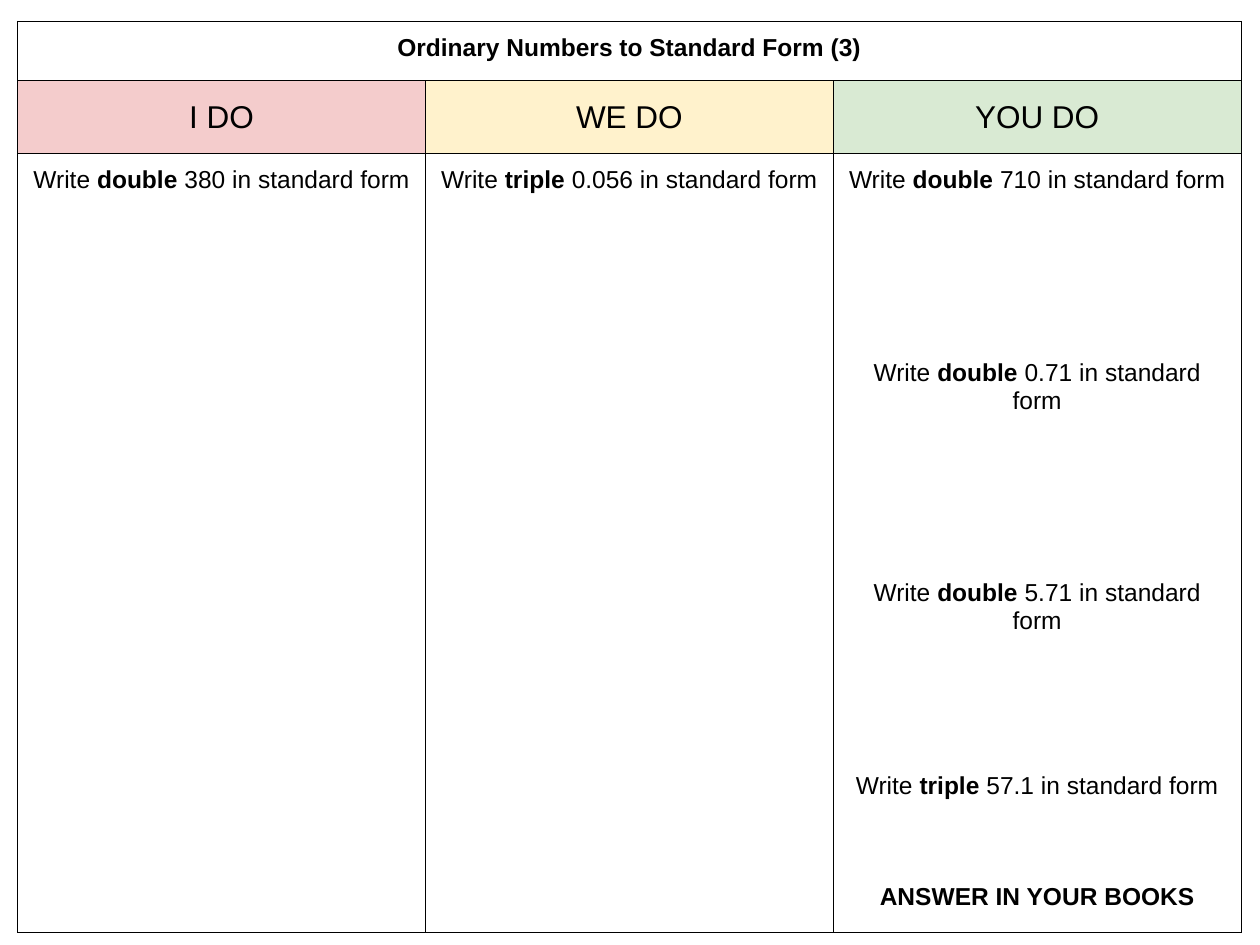
from dataclasses import dataclass

from lxml import etree
from pptx import Presentation
from pptx.dml.color import RGBColor
from pptx.enum.text import MSO_ANCHOR, PP_ALIGN
from pptx.oxml.ns import qn
from pptx.util import Inches, Pt

CENTER = PP_ALIGN.CENTER
TOP, MIDDLE = MSO_ANCHOR.TOP, MSO_ANCHOR.MIDDLE
BLANK_LAYOUT = 6
SLIDE_WIDTH, SLIDE_HEIGHT = 10, 7.5


@dataclass(frozen=True)
class Theme:
    font: str = "Arial"
    ink: str = "000000"
    i_do: str = "F4CCCC"
    we_do: str = "FFF2CC"
    you_do: str = "D9EAD3"
    body_size: float = 14
    heading_size: float = 18
    line_pitch: float = 15.75
    border_width: float = 0.75
    pad: float = 0.1
    side_pad: float = 0.11


@dataclass(frozen=True)
class Task:
    """One exercise; gap is the writing room above it, in text lines."""
    multiple: str
    number: str
    gap: int = 0

    @property
    def runs(self):
        return [("Write ", False), (f"{self.multiple} ", True),
                (f"{self.number} in standard form", False)]


class Worksheet:
    def __init__(self, slide, theme):
        self.slide = slide
        self.theme = theme

    def grid(self, left, top, width, row_heights, columns):
        """Add a table placed by shares of the slide's size."""
        frame = self.slide.shapes.add_table(
            len(row_heights), columns,
            Inches(left * SLIDE_WIDTH), Inches(top * SLIDE_HEIGHT),
            Inches(width * SLIDE_WIDTH), Inches(sum(row_heights) * SLIDE_HEIGHT))
        table = frame.table
        table.first_row = table.horz_banding = False
        for row, height in zip(table.rows, row_heights):
            row.height = Inches(height * SLIDE_HEIGHT)
        for cell in table.iter_cells():
            self.borders(cell)
            cell.fill.background()
        return table

    def borders(self, cell):
        properties = cell._tc.get_or_add_tcPr()
        for side in ("a:lnL", "a:lnR", "a:lnT", "a:lnB"):
            line = etree.SubElement(properties, qn(side),
                                    w=str(Pt(self.theme.border_width)))
            fill = etree.SubElement(line, qn("a:solidFill"))
            etree.SubElement(fill, qn("a:srgbClr"), val=self.theme.ink)

    def prepare(self, cell, anchor):
        cell.vertical_anchor = anchor
        cell.margin_left = cell.margin_right = Inches(self.theme.side_pad)
        cell.margin_top = cell.margin_bottom = Inches(self.theme.pad)

    def paragraph(self, paragraph, size, bold=False, text=""):
        paragraph.text = text
        paragraph.alignment = CENTER
        font = paragraph.font
        font.name, font.size, font.bold = self.theme.font, Pt(size), bold
        font.color.rgb = RGBColor.from_string(self.theme.ink)

    def title(self, cell, text):
        self.prepare(cell, TOP)
        self.paragraph(cell.text_frame.paragraphs[0], self.theme.body_size, True, text)

    def heading(self, cell, text, color):
        self.prepare(cell, MIDDLE)
        cell.fill.solid()
        cell.fill.fore_color.rgb = RGBColor.from_string(color)
        self.paragraph(cell.text_frame.paragraphs[0], self.theme.heading_size, text=text)

    def gap_before(self, paragraph, lines):
        paragraph.space_before = Pt(lines * self.theme.line_pitch)

    def tasks(self, cell, tasks):
        self.prepare(cell, TOP)
        frame = cell.text_frame
        for index, task in enumerate(tasks):
            paragraph = frame.add_paragraph() if index else frame.paragraphs[0]
            self.paragraph(paragraph, self.theme.body_size)
            self.gap_before(paragraph, task.gap)
            for text, bold in task.runs:
                run = paragraph.add_run()
                run.text, run.font.bold = text, bold

    def closing(self, cell, text, gap):
        paragraph = cell.text_frame.add_paragraph()
        self.paragraph(paragraph, self.theme.body_size, True, text)
        self.gap_before(paragraph, gap)


def main():
    presentation = Presentation()
    presentation.slide_width = Inches(SLIDE_WIDTH)
    presentation.slide_height = Inches(SLIDE_HEIGHT)
    slide = presentation.slides.add_slide(presentation.slide_layouts[BLANK_LAYOUT])
    theme = Theme()
    worksheet = Worksheet(slide, theme)

    stages = [
        ("I DO", theme.i_do, [Task("double", "380")]),
        ("WE DO", theme.we_do, [Task("triple", "0.056")]),
        ("YOU DO", theme.you_do, [
            Task("double", "710"), Task("double", "0.71", 6),
            Task("double", "5.71", 6), Task("triple", "57.1", 5)]),
    ]
    row_heights = [height / SLIDE_HEIGHT for height in (0.47, 0.58, 6.18)]
    table = worksheet.grid(0.014, 0.17 / SLIDE_HEIGHT, 0.971, row_heights, len(stages))

    table.cell(0, 0).merge(table.cell(0, len(stages) - 1))
    worksheet.title(table.cell(0, 0), "Ordinary Numbers to Standard Form (3)")
    for column, (name, color, tasks) in enumerate(stages):
        worksheet.heading(table.cell(1, column), name, color)
        worksheet.tasks(table.cell(2, column), tasks)
    worksheet.closing(table.cell(2, len(stages) - 1), "ANSWER IN YOUR BOOKS", 3)

    presentation.save("out.pptx")


if __name__ == "__main__":
    main()
